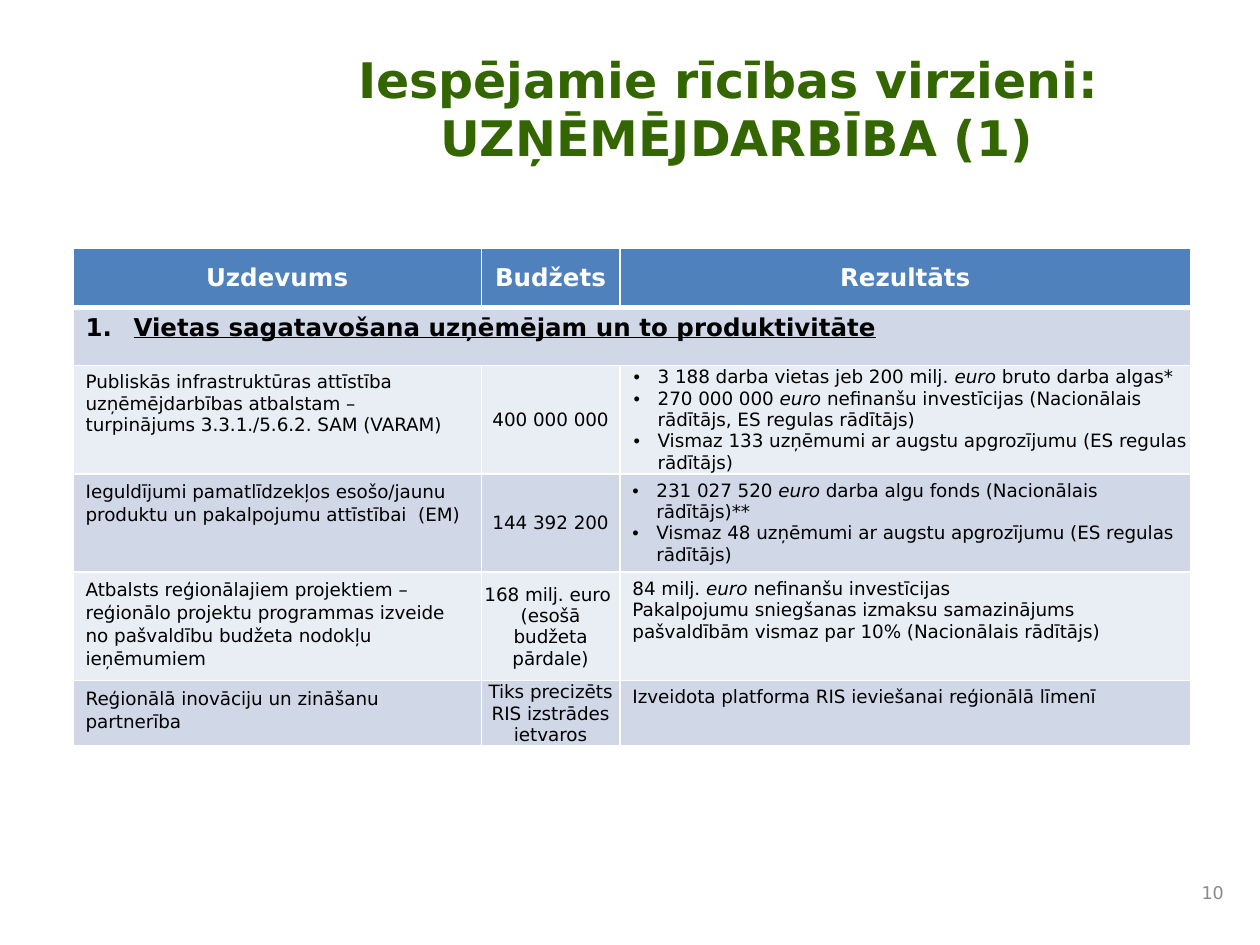
from lxml import etree
from pptx import Presentation
from pptx.dml.color import RGBColor
from pptx.enum.text import MSO_ANCHOR, PP_ALIGN
from pptx.oxml.ns import qn
from pptx.util import Inches, Pt

LEFT, CENTER, RIGHT = PP_ALIGN.LEFT, PP_ALIGN.CENTER, PP_ALIGN.RIGHT
TOP, MIDDLE = MSO_ANCHOR.TOP, MSO_ANCHOR.MIDDLE
FONT = "DejaVu Sans"
COLORS = {
    "title": "336600", "header": "4F81BD", "dark_band": "D0D8E8",
    "light_band": "E9EDF4", "white": "FFFFFF", "text": "000000",
    "page_number": "898989",
}

# Text formats
TITLE = {"size": Pt(28), "bold": True, "color": "title"}
HEADER = {"size": Pt(14), "bold": True, "color": "white"}
SECTION = {"size": Pt(14), "bold": True, "underline": True, "color": "text"}
BODY = {"size": Pt(10.5), "bold": False, "color": "text"}
NUMBER = {"size": Pt(10), "color": "page_number"}

# Cell insets: left, top, right, bottom
WIDE = (0.1, 0.05, 0.1, 0.05)
TIGHT = (0.01, 0.01, 0.01, 0)

COLUMN_WIDTHS = (3.24, 1.1, 4.53)
ROW_HEIGHTS = (0.47, 0.46, 0.86, 0.78, 0.86, 0.51)
HEADINGS = ("Uzdevums", "Budžets", "Rezultāts")
SECTION_NAME = "Vietas sagatavošana uzņēmējam un to produktivitāte"

# Task, task line spacing, budget lines, result lines (*italic*), result layout
TASKS = [
    ("Publiskās infrastruktūras attīstība uzņēmējdarbības atbalstam – "
     "turpinājums 3.3.1./5.6.2. SAM (VARAM)", None,
     ["400 000 000"],
     ["3 188 darba vietas jeb 200 milj. *euro* bruto darba algas*",
      "270 000 000 *euro* nefinanšu investīcijas (Nacionālais rādītājs, "
      "ES regulas rādītājs)",
      "Vismaz 133 uzņēmumi ar augstu apgrozījumu (ES regulas rādītājs)"],
     {"bullet": "•", "indent": (0.29, 0.19), "insets": TIGHT, "anchor": MIDDLE}),
    ("Ieguldījumi pamatlīdzekļos esošo/jaunu produktu un pakalpojumu "
     "attīstībai  (EM)", 1.07,
     ["144 392 200"],
     ["231 027 520 *euro* darba algu fonds (Nacionālais rādītājs)**",
      "Vismaz 48 uzņēmumi ar augstu apgrozījumu (ES regulas rādītājs)"],
     {"bullet": "•", "indent": (0.19, 0.19)}),
    ("Atbalsts reģionālajiem projektiem – reģionālo projektu programmas "
     "izveide no pašvaldību budžeta nodokļu ieņēmumiem", 1.07,
     ["168 milj. euro ", "(esošā budžeta pārdale)"],
     ["84 milj. *euro* nefinanšu investīcijas",
      "Pakalpojumu sniegšanas izmaksu samazinājums pašvaldībām vismaz "
      "par 10% (Nacionālais rādītājs)"], {}),
    ("Reģionālā inovāciju un zināšanu partnerība", 1.07,
     ["Tiks precizēts RIS izstrādes ietvaros"],
     ["Izveidota platforma RIS ieviešanai reģionālā līmenī"], {}),
]


def add_span(para, text, style, italic=False):
    span = para.add_run()
    span.text = text
    span.font.name = FONT
    for name, value in style.items():
        if name == "color":
            span.font.color.rgb = RGBColor.from_string(COLORS[value])
        else:
            setattr(span.font, name, value)
    if italic:
        span.font.italic = True


def add_bullet(para, bullet, indent):
    properties = para._p.get_or_add_pPr()
    left, hanging = indent
    properties.set("marL", str(Inches(left)))
    properties.set("indent", str(-Inches(hanging)))
    if bullet == "1.":
        etree.SubElement(properties, qn("a:buAutoNum"), type="arabicPeriod")
    else:
        etree.SubElement(properties, qn("a:buFont"), typeface="Arial")
        etree.SubElement(properties, qn("a:buChar"), char=bullet)


def write_lines(frame, lines, style, align=LEFT, spacing=None, bullet=None,
                indent=None):
    for index, line in enumerate(lines):
        para = frame.add_paragraph() if index else frame.paragraphs[0]
        para.alignment = align
        if spacing:
            para.line_spacing = spacing
        if bullet:
            add_bullet(para, bullet, indent)
        before, marker, after = line.partition("*euro*")
        add_span(para, before, style)
        if marker:
            add_span(para, "euro", style, italic=True)
            add_span(para, after, style)


def add_text(page, bounds, text, style, align, anchor=TOP):
    box = page.shapes.add_textbox(*map(Inches, bounds))
    frame = box.text_frame
    frame.word_wrap = True
    frame.vertical_anchor = anchor
    for index, line in enumerate(text.split("\n")):
        para = frame.paragraphs[0]
        para.alignment = align
        if index:
            para.add_line_break()
        add_span(para, line, style)


def paint_cell(cell, fill, bottom=1):
    properties = cell._tc.get_or_add_tcPr()
    for side, points in (("L", 1), ("R", 1), ("T", 1), ("B", bottom)):
        line = etree.SubElement(properties, qn("a:ln" + side), w=str(Pt(points)))
        solid = etree.SubElement(line, qn("a:solidFill"))
        etree.SubElement(solid, qn("a:srgbClr"), val=COLORS["white"])
    cell.fill.solid()
    cell.fill.fore_color.rgb = RGBColor.from_string(COLORS[fill])


def fill_cell(cell, lines, style, insets=WIDE, anchor=TOP, **layout):
    sides = ("margin_left", "margin_top", "margin_right", "margin_bottom")
    for side, inset in zip(sides, insets):
        setattr(cell, side, Inches(inset))
    cell.vertical_anchor = anchor
    write_lines(cell.text_frame, lines, style, **layout)


def add_task_table(page):
    holder = page.shapes.add_table(
        len(ROW_HEIGHTS), len(COLUMN_WIDTHS), Inches(0.58), Inches(1.97),
        Inches(sum(COLUMN_WIDTHS)), Inches(sum(ROW_HEIGHTS)))
    table = holder.table
    table.horz_banding = False
    for column, width in zip(table.columns, COLUMN_WIDTHS):
        column.width = Inches(width)
    for index, (row, height) in enumerate(zip(table.rows, ROW_HEIGHTS)):
        row.height = Inches(height)
        band = "dark_band" if index % 2 else "light_band"
        for cell in row.cells:
            paint_cell(cell, band if index else "header", 1 if index else 3)

    # Header and section rows
    for column, heading in enumerate(HEADINGS):
        fill_cell(table.cell(0, column), [heading], HEADER, anchor=MIDDLE,
                  align=CENTER)
    table.cell(1, 0).merge(table.cell(1, 2))
    fill_cell(table.cell(1, 0), [SECTION_NAME], SECTION, bullet="1.",
              indent=(0.38, 0.38))

    # Task rows
    for row, (task, spacing, budget, results, layout) in enumerate(TASKS, 2):
        fill_cell(table.cell(row, 0), [task], BODY, spacing=spacing)
        fill_cell(table.cell(row, 1), budget, BODY, TIGHT, MIDDLE, align=CENTER)
        fill_cell(table.cell(row, 2), results, BODY, **layout)


def main():
    deck = Presentation()
    deck.slide_width, deck.slide_height = Inches(10), Inches(7.5)
    page = deck.slides.add_slide(deck.slide_layouts[6])
    add_task_table(page)
    add_text(page, (2.24, 0.34, 7.21, 0.91),
             "Iespējamie rīcības virzieni: \nUZŅĒMĒJDARBĪBA (1)", TITLE, CENTER)
    add_text(page, (9.33, 6.92, 0.48, 0.33), "10", NUMBER, RIGHT, MIDDLE)
    deck.save("out.pptx")


if __name__ == "__main__":
    main()
